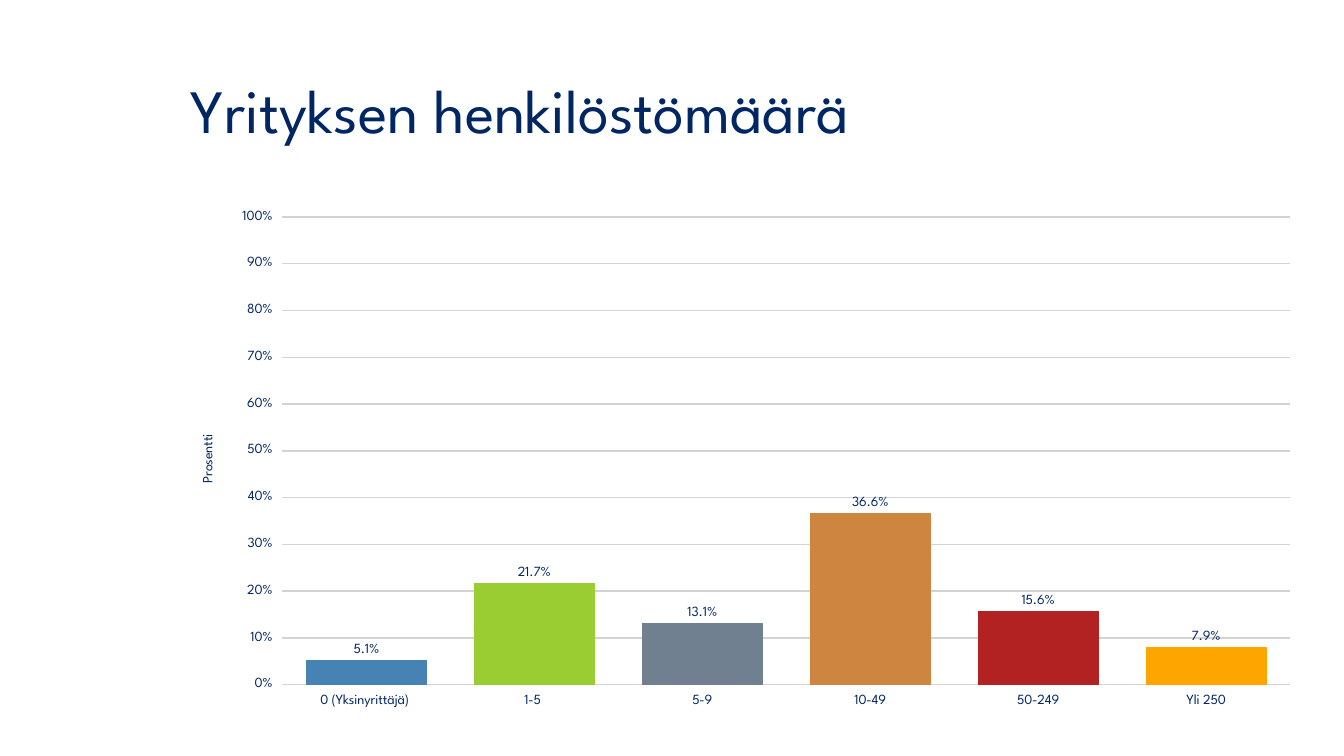
from lxml import etree
from pptx import Presentation
from pptx.chart.data import CategoryChartData
from pptx.dml.color import RGBColor
from pptx.enum.chart import XL_CHART_TYPE, XL_LABEL_POSITION, XL_TICK_MARK
from pptx.enum.text import MSO_ANCHOR, PP_ALIGN
from pptx.oxml.ns import qn
from pptx.util import Inches, Pt

COLUMN = XL_CHART_TYPE.COLUMN_CLUSTERED
OUTSIDE_END = XL_LABEL_POSITION.OUTSIDE_END
TICK_OUTSIDE = XL_TICK_MARK.OUTSIDE
TICK_NONE = XL_TICK_MARK.NONE
MIDDLE = MSO_ANCHOR.MIDDLE
LEFT = PP_ALIGN.LEFT
FONT = "League Spartan"
NAVY = "002663"
GRID_GREY = "D3D3D3"
TITLE_ONLY = 5

STAFF_SIZES = [
    ("0 (Yksinyrittäjä) ", 0.051, "4682B4"),
    ("1-5 ", 0.217, "9ACD32"),
    ("5-9", 0.131, "708090"),
    ("10-49", 0.366, "CD853F"),
    ("50-249", 0.156, "B22222"),
    ("Yli 250", 0.079, "FFA500"),
]
PLOT_LAYOUT = [
    ("layoutTarget", "inner"),
    ("xMode", "edge"),
    ("yMode", "edge"),
    ("x", "0.09"),
    ("y", "0.03"),
    ("w", "0.89"),
    ("h", "0.91"),
]


def color(hex_value):
    return RGBColor.from_string(hex_value)


def style_font(font, size):
    font.name = FONT
    font.size = Pt(size)
    font.bold = False
    font.color.rgb = color(NAVY)


presentation = Presentation()
presentation.slide_width = Inches(13.33)
presentation.slide_height = Inches(7.5)
slide = presentation.slides.add_slide(presentation.slide_layouts[TITLE_ONLY])
slide.background.fill.solid()
slide.background.fill.fore_color.rgb = color("FFFFFF")

title = slide.shapes.title
title.left, title.top = Inches(1.79), Inches(0.4)
title.width, title.height = Inches(10.94), Inches(1.45)
title.text_frame.vertical_anchor = MIDDLE
paragraph = title.text_frame.paragraphs[0]
paragraph.alignment = LEFT
paragraph.line_spacing = 0.9
run = paragraph.add_run()
run.text = "Yrityksen henkilöstömäärä"
style_font(run.font, 44)

chart_data = CategoryChartData(number_format="0.0%")
chart_data.categories = [name for name, share, fill in STAFF_SIZES]
chart_data.add_series("Series 1", [share for name, share, fill in STAFF_SIZES])
chart = slide.shapes.add_chart(
    COLUMN, Inches(1.79), Inches(2), Inches(11.23), Inches(5.1), chart_data
).chart
chart.has_title = False
chart.has_legend = False
style_font(chart.font, 18)

plot = chart.plots[0]
plot.gap_width = 40
plot.vary_by_categories = False
series = plot.series[0]
series.format.fill.solid()
series.format.fill.fore_color.rgb = color(STAFF_SIZES[0][2])
for index, (name, share, fill) in enumerate(STAFF_SIZES):
    point_format = series.points[index].format
    point_format.fill.solid()
    point_format.fill.fore_color.rgb = color(fill)
    point_format.line.color.rgb = color(fill)
    point_format.line.width = Pt(0.75)

labels = series.data_labels
labels.show_value = True
labels.number_format = "0.0%"
labels.number_format_is_linked = False
labels.position = OUTSIDE_END
style_font(labels.font, 10)

for axis in (chart.category_axis, chart.value_axis):
    axis.major_tick_mark = TICK_OUTSIDE
    axis.minor_tick_mark = TICK_NONE
    axis.format.line.fill.background()
    style_font(axis.tick_labels.font, 10)

value_axis = chart.value_axis
value_axis.minimum_scale = 0
value_axis.maximum_scale = 1
value_axis.major_unit = 0.1
value_axis.tick_labels.number_format = "0%"
value_axis.tick_labels.number_format_is_linked = False
value_axis.has_major_gridlines = True
value_axis.major_gridlines.format.line.color.rgb = color(GRID_GREY)
value_axis.major_gridlines.format.line.width = Pt(1)
axis_title_run = value_axis.axis_title.text_frame.paragraphs[0].add_run()
axis_title_run.text = "Prosentti"
style_font(axis_title_run.font, 10)
axis_title_body = value_axis.axis_title.text_frame._txBody.find(qn("a:bodyPr"))
axis_title_body.set("rot", "-5400000")
axis_title_body.set("vert", "horz")

plot_area = chart.element.find(".//" + qn("c:plotArea"))
for old_layout in plot_area.findall(qn("c:layout")):
    plot_area.remove(old_layout)
layout = etree.Element(qn("c:layout"))
manual_layout = etree.SubElement(layout, qn("c:manualLayout"))
for tag, value in PLOT_LAYOUT:
    etree.SubElement(manual_layout, qn("c:" + tag)).set("val", value)
plot_area.insert(0, layout)

presentation.save("out.pptx")
